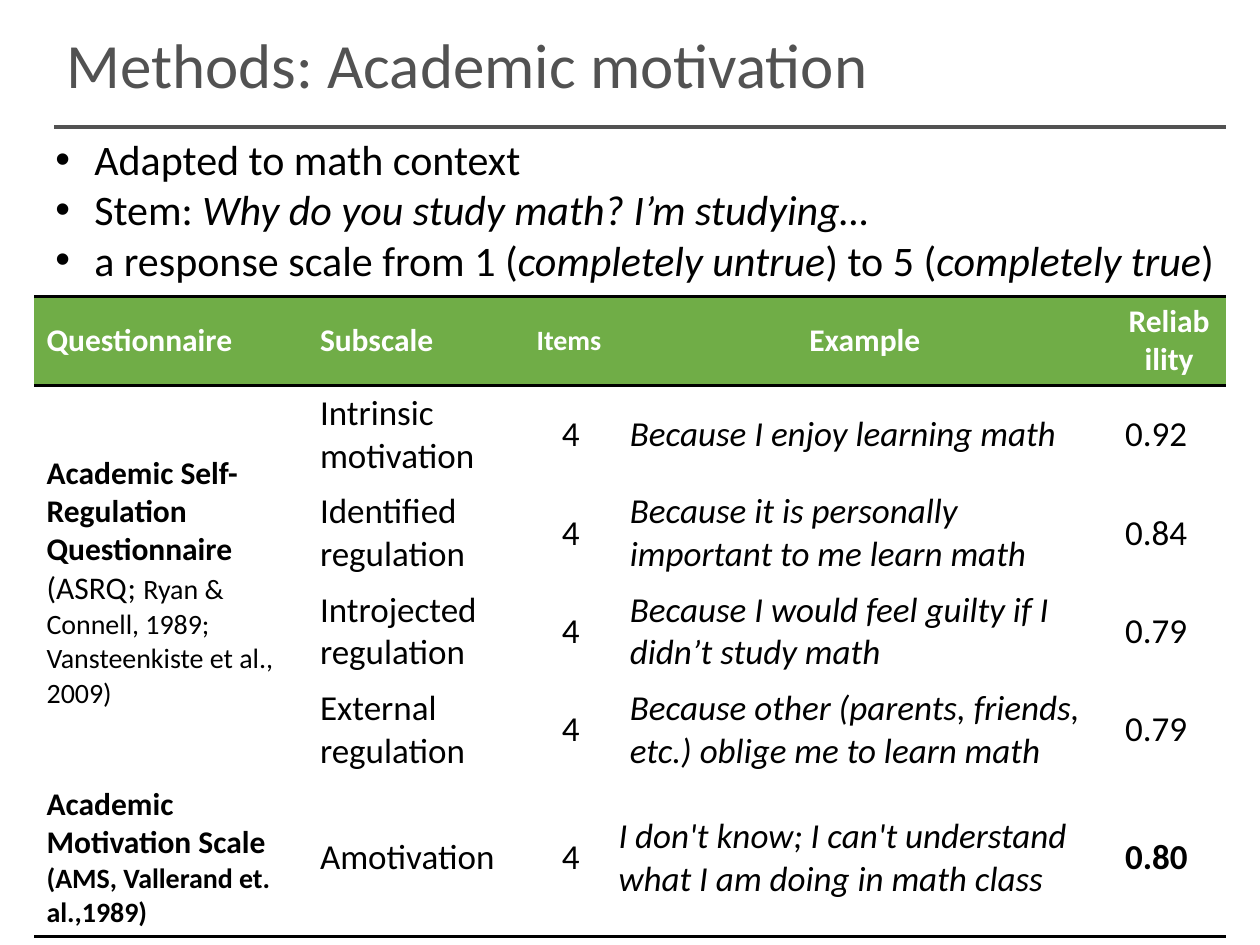
import dataclasses

import lxml.etree
import pptx
import pptx.dml.color
import pptx.enum.shapes
import pptx.enum.text
import pptx.oxml
import pptx.oxml.ns
import pptx.util

ALIGN = pptx.enum.text.PP_ALIGN
MIDDLE = pptx.enum.text.MSO_ANCHOR.MIDDLE
TOP = pptx.enum.text.MSO_ANCHOR.TOP


@dataclasses.dataclass(frozen=True)
class Theme:
    font: str = "Calibri"
    ink: str = "000000"
    grey: str = "525252"
    green: str = "70AD47"
    white: str = "FFFFFF"
    title: int = 36
    bullet: int = 24
    body: int = 20
    label: int = 18
    small: int = 16
    rule: float = 2.25
    border: int = 2


THEME = Theme()
WIDTH = pptx.util.Inches(10)
HEIGHT = pptx.util.Inches(7.5)
NO_STYLE = "{2D5ABB26-0587-4C30-8999-92F81FD0307C}"

BULLETS = [
    [("Adapted to math context", False)],
    [("Stem: ", False), ("Why do you study math? I’m studying…", True)],
    [("a response scale from 1 (", False), ("completely untrue", True),
     (") to 5 (", False), ("completely true", True), (")", False)],
]
HEADERS = ["Questionnaire", "Subscale", "Items", "Example", "Reliability"]
SUBSCALES = [
    ("Intrinsic motivation", "4", "Because I enjoy learning math", "0.92"),
    ("Identified regulation", "4",
     "Because it is personally important to me learn math", "0.84"),
    ("Introjected regulation", "4",
     "Because I would feel guilty if I didn’t study math", "0.79"),
    ("External regulation", "4",
     "Because other (parents, friends, etc.) oblige me to learn math", "0.79"),
    ("Amotivation", "4",
     "I don't know; I can't understand what I am doing in math class", "0.80"),
]
COLUMN_SHARES = [21.7, 17.2, 7.4, 39.3, 9]
ROW_SHARES = [9.5] + [10.4] * 4 + [16.67]


def across(share):
    return round(WIDTH * share / 100)


def down(share):
    return round(HEIGHT * share / 100)


def rgb(value):
    return pptx.dml.color.RGBColor.from_string(value)


def add_run(p, text, size, color=THEME.ink, bold=False, italic=False):
    r = p.add_run()
    r.text = text
    r.font.name = THEME.font
    r.font.size = pptx.util.Pt(size)
    r.font.color.rgb = rgb(color)
    r.font.bold = bold
    r.font.italic = italic


def add_title(s, text):
    sp = s.shapes.add_textbox(across(4.3), 0, across(81.5), down(13.47))
    tf = sp.text_frame
    tf.word_wrap = True
    tf.vertical_anchor = MIDDLE
    add_run(tf.paragraphs[0], text, THEME.title, THEME.grey)


def add_rule(s):
    y = down(13.47)
    line = s.shapes.add_connector(
        pptx.enum.shapes.MSO_CONNECTOR.STRAIGHT, across(4.3), y, across(97.3), y)
    line.line.color.rgb = rgb(THEME.grey)
    line.line.width = pptx.util.Pt(THEME.rule)
    lxml.etree.SubElement(line._element.spPr, pptx.oxml.ns.qn("a:effectLst"))


def add_bullets(s, items):
    sp = s.shapes.add_textbox(across(3.4), down(13.47), across(94.9), down(22.93))
    tf = sp.text_frame
    tf.word_wrap = False
    tf.auto_size = pptx.enum.text.MSO_AUTO_SIZE.SHAPE_TO_FIT_TEXT
    indent = across(3.1)
    for i, item in enumerate(items):
        p = tf.add_paragraph() if i else tf.paragraphs[0]
        pPr = p._p.get_or_add_pPr()
        pPr.set("marL", str(indent))
        pPr.set("indent", str(-indent))
        font = lxml.etree.SubElement(pPr, pptx.oxml.ns.qn("a:buFont"))
        font.set("typeface", "Arial")
        bullet = lxml.etree.SubElement(pPr, pptx.oxml.ns.qn("a:buChar"))
        bullet.set("char", "•")
        for text, italic in item:
            add_run(p, text, THEME.bullet, italic=italic)


def set_border(cell, *sides):
    tcPr = cell._tc.get_or_add_tcPr()
    for i, side in enumerate(sides):
        tcPr.insert(i, pptx.oxml.parse_xml(
            f'<a:{side} {pptx.oxml.ns.nsdecls("a")} w="{pptx.util.Pt(THEME.border)}">'
            f'<a:solidFill><a:srgbClr val="{THEME.ink}"/></a:solidFill></a:{side}>'))


def fill_cell(cell, runs, align=ALIGN.LEFT, anchor=MIDDLE):
    cell.vertical_anchor = anchor
    p = cell.text_frame.paragraphs[0]
    p.alignment = align
    for text, size, style in runs:
        add_run(p, text, size, **style)


def add_header(table):
    for c, text in enumerate(HEADERS):
        cell = table.cell(0, c)
        cell.fill.solid()
        cell.fill.fore_color.rgb = rgb(THEME.green)
        size = THEME.small if text == "Items" else THEME.label
        align = ALIGN.CENTER if c > 2 else ALIGN.LEFT
        fill_cell(cell, [(text, size, {"color": THEME.white, "bold": True})], align)
        set_border(cell, "lnT", "lnB")


def add_subscales(table):
    last = len(SUBSCALES)
    for row, values in enumerate(SUBSCALES, 1):
        for c, text in enumerate(values, 1):
            style = {"italic": c == 3, "bold": row == last and c == 4}
            align = ALIGN.CENTER if c == 2 else ALIGN.LEFT
            fill_cell(table.cell(row, c), [(text, THEME.body, style)], align)
    example = table.cell(last, 3)
    example.margin_left = example.margin_right = example.margin_top = across(0.1)
    example.margin_bottom = 0


def add_questionnaires(table):
    bold = {"bold": True}
    table.cell(1, 0).merge(table.cell(4, 0))
    fill_cell(table.cell(1, 0), [
        ("Academic Self-Regulation Questionnaire ", THEME.label, bold),
        ("(ASRQ; ", THEME.label, {}),
        ("Ryan & Connell, 1989; Vansteenkiste et al., 2009)", THEME.small, {})])
    fill_cell(table.cell(5, 0), [
        ("Academic Motivation Scale ", THEME.label, bold),
        ("(AMS, Vallerand et. al.,1989)", THEME.small, bold)], anchor=TOP)


def add_scale_table(s):
    frame = s.shapes.add_table(
        len(ROW_SHARES), len(COLUMN_SHARES), across(2.7), down(31.33),
        across(sum(COLUMN_SHARES)), down(sum(ROW_SHARES)))
    table = frame.table
    table.first_row = table.horz_banding = False
    table._tbl.tblPr.find(pptx.oxml.ns.qn("a:tableStyleId")).text = NO_STYLE
    for column, share in zip(table.columns, COLUMN_SHARES):
        column.width = across(share)
    for row, share in zip(table.rows, ROW_SHARES):
        row.height = down(share)
    for cell in table.iter_cells():
        cell.fill.background()
    add_header(table)
    add_questionnaires(table)
    add_subscales(table)
    for c in range(len(COLUMN_SHARES)):
        set_border(table.cell(len(ROW_SHARES) - 1, c), "lnB")


def main():
    prs = pptx.Presentation()
    prs.slide_width = WIDTH
    prs.slide_height = HEIGHT
    s = prs.slides.add_slide(prs.slide_layouts[6])
    add_rule(s)
    add_title(s, "Methods: Academic motivation")
    add_scale_table(s)
    add_bullets(s, BULLETS)
    prs.save("out.pptx")


if __name__ == "__main__":
    main()
